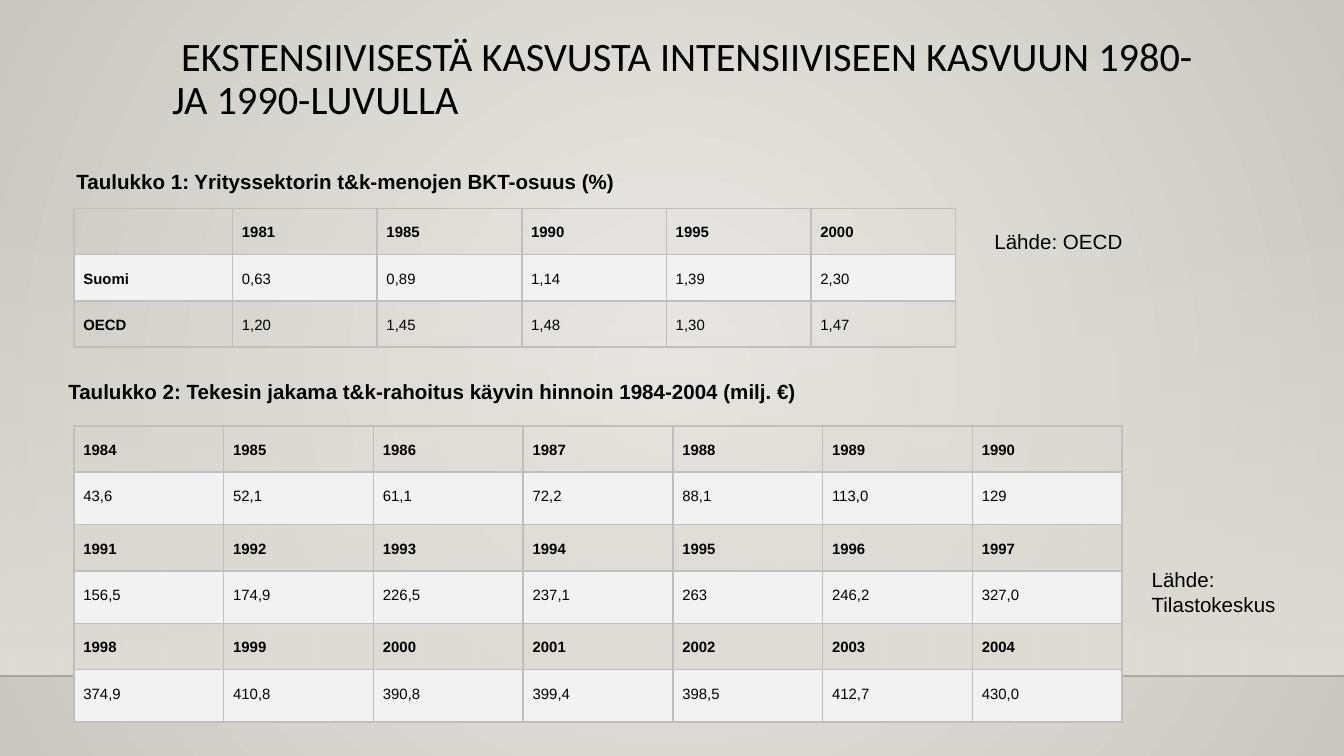
from dataclasses import dataclass

from lxml import etree
from pptx import Presentation
from pptx import util as u
from pptx.dml.color import RGBColor
from pptx.enum import shapes, text
from pptx.oxml import parse_xml
from pptx.oxml.ns import nsdecls, qn


@dataclass(frozen=True)
class Theme:
    """Colours, fonts and type sizes of the slide."""
    ink: str = "000000"
    border: str = "BFBFBF"
    stripe: str = "F2F2F2"
    glow: str = "ECEAE7"
    edge: str = "CAC7C1"
    wall: str = "DFDBD5"
    floor_line: str = "000001"
    title_font: str = "Calibri"
    body_font: str = "Arial"
    title_size: float = 21.6
    label_size: float = 11
    cell_size: float = 8


THEME = Theme()

SPENDING_SHARE = [
    ["", "1981", "1985", "1990", "1995", "2000"],
    ["Suomi", "0,63", "0,89", "1,14", "1,39", "2,30"],
    ["OECD", "1,20", "1,45", "1,48", "1,30", "1,47"],
]

FUNDING = [
    [str(year) for year in range(1984, 1991)],
    ["43,6", "52,1", "61,1", "72,2", "88,1", "113,0", "129"],
    [str(year) for year in range(1991, 1998)],
    ["156,5", "174,9", "226,5", "237,1", "263", "246,2", "327,0"],
    [str(year) for year in range(1998, 2005)],
    ["374,9", "410,8", "390,8", "399,4", "398,5", "412,7", "430,0"],
]


def inches(*values):
    """Convert several lengths to inches."""
    return [u.Inches(value) for value in values]


def gradient(stops, direction):
    """Return a gradient fill from (position, colour, alpha) stops."""
    marks = "".join(
        f'<a:gs pos="{position * 1000}"><a:srgbClr val="{colour}">'
        f'<a:alpha val="{alpha * 1000}"/></a:srgbClr></a:gs>'
        for position, colour, alpha in stops
    )
    return parse_xml(f'<a:gradFill {nsdecls("a")} rotWithShape="1">'
                     f"<a:gsLst>{marks}</a:gsLst>{direction}</a:gradFill>")


def replace_gradient(parent, fill):
    """Swap the gradient inside a parent element for another one."""
    parent.replace(parent.find(qn("a:gradFill")), fill)


def add_run(paragraph, words, size, font, bold=False):
    """Add one formatted run to a paragraph."""
    run = paragraph.add_run()
    run.text = words
    run.font.size = u.Pt(size)
    run.font.name = font
    run.font.bold = bold
    run.font.color.rgb = RGBColor.from_string(THEME.ink)


def set_frame(frame, anchor):
    """Give a text frame even insets, wrapping and an anchor."""
    frame.word_wrap = True
    frame.auto_size = text.MSO_AUTO_SIZE.NONE
    frame.vertical_anchor = anchor
    frame.margin_left = frame.margin_right = u.Inches(0.1)
    frame.margin_top = frame.margin_bottom = u.Inches(0.1)


def add_backdrop(slide):
    """Draw the radial background, the fading wall and the floor line."""
    slide.background.fill.gradient()
    circle = ('<a:path path="circle">'
              '<a:fillToRect l="50000" t="50000" r="50000" b="50000"/></a:path>')
    replace_gradient(slide.background._cSld.bg.bgPr,
                     gradient([(0, THEME.glow, 100), (100, THEME.edge, 100)], circle))

    wall = slide.shapes.add_shape(shapes.MSO_SHAPE.RECTANGLE, *inches(0, 1.66, 10, 3.37))
    wall.shadow.inherit = False
    wall.line.fill.background()
    wall.fill.gradient()
    replace_gradient(wall._element.spPr,
                     gradient([(0, THEME.wall, 0), (100, THEME.wall, 100)],
                              '<a:lin ang="5400000" scaled="0"/>'))

    floor = slide.shapes.add_connector(shapes.MSO_CONNECTOR.STRAIGHT,
                                       *inches(0, 5.03, 10, 5.03))
    floor.line.width = u.Pt(1)
    floor.line.color.rgb = RGBColor.from_string(THEME.floor_line)
    properties = floor._element.spPr
    colour = properties.find(".//" + qn("a:srgbClr"))
    etree.SubElement(colour, qn("a:alpha"), val="20000")
    etree.SubElement(properties, qn("a:effectLst"))


def add_title(slide, words):
    """Place and format the slide title."""
    title = slide.shapes.title
    title.left, title.top, title.width, title.height = inches(1.18, 0.17, 7.88, 0.86)
    set_frame(title.text_frame, text.MSO_ANCHOR.TOP)
    paragraph = title.text_frame.paragraphs[0]
    paragraph.alignment = text.PP_ALIGN.LEFT
    paragraph.line_spacing = 0.9
    add_run(paragraph, words, THEME.title_size, THEME.title_font)


def add_label(slide, box, words, bold=False, anchor=text.MSO_ANCHOR.TOP):
    """Add a table caption or a source note."""
    label = slide.shapes.add_textbox(*inches(*box))
    set_frame(label.text_frame, anchor)
    add_run(label.text_frame.paragraphs[0], words, THEME.label_size, THEME.body_font, bold)


def add_borders(cell):
    """Draw thin lines on all four sides of a cell."""
    properties = cell._tc.get_or_add_tcPr()
    for index, side in enumerate(("lnL", "lnR", "lnT", "lnB")):
        properties.insert(index, parse_xml(
            f'<a:{side} {nsdecls("a")} w="12700"><a:solidFill>'
            f'<a:srgbClr val="{THEME.border}"/></a:solidFill></a:{side}>'))


def fill_cell(cell, words, bold, striped):
    """Write and format one table cell."""
    cell.margin_left = cell.margin_right = u.Inches(0.07)
    cell.margin_top = cell.margin_bottom = u.Inches(0.1)
    if striped:
        cell.fill.solid()
        cell.fill.fore_color.rgb = RGBColor.from_string(THEME.stripe)
    else:
        cell.fill.background()
    add_borders(cell)
    paragraph = cell.text_frame.paragraphs[0]
    paragraph.line_spacing = 1.15
    if words:
        add_run(paragraph, words, THEME.cell_size, THEME.body_font, bold)
    else:
        etree.SubElement(paragraph._p, qn("a:endParaRPr"), sz=str(THEME.cell_size * 100))


def add_grid(slide, box, rows, widths, heights, is_bold):
    """Add a table whose every second row is striped."""
    frame = slide.shapes.add_table(len(rows), len(widths), *inches(*box))
    table = frame.table
    table.first_row = table.horz_banding = False
    for column, width in zip(table.columns, widths):
        column.width = u.Inches(width)
    for row, height in zip(table.rows, heights):
        row.height = u.Inches(height)
    for i, values in enumerate(rows):
        for j, words in enumerate(values):
            fill_cell(table.cell(i, j), words, is_bold(i, j), i % 2 == 1)


def main():
    """Build the slide and save it."""
    presentation = Presentation()
    presentation.slide_width = u.Inches(10)
    presentation.slide_height = u.Inches(10 * 9 / 16)
    slide = presentation.slides.add_slide(presentation.slide_layouts[5])
    add_backdrop(slide)
    add_title(slide, " EKSTENSIIVISESTÄ KASVUSTA INTENSIIVISEEN KASVUUN 1980- JA 1990-LUVULLA")

    add_grid(slide, (0.55, 3.17, 7.8, 2.21), FUNDING,
             [7.8 / 7] * 7, [0.34, 0.39] * 3, lambda i, j: i % 2 == 0)
    add_label(slide, (0.41, 2.65, 6.7, 0.52),
              "Taulukko 2: Tekesin jakama t&k-rahoitus käyvin hinnoin 1984-2004 (milj. €)",
              bold=True, anchor=text.MSO_ANCHOR.MIDDLE)
    add_label(slide, (8.47, 4.12, 1.59, 0.62), "Lähde: Tilastokeskus")

    add_grid(slide, (0.55, 1.55, 6.56, 1.02), SPENDING_SHARE,
             [1.18] + [(6.56 - 1.18) / 5] * 5, [0.34] * 3, lambda i, j: i == 0 or j == 0)
    add_label(slide, (0.47, 1.16, 5.61, 0.38),
              "Taulukko 1: Yrityssektorin t&k-menojen BKT-osuus (%)", bold=True)
    add_label(slide, (7.3, 1.61, 2.35, 0.19), "Lähde: OECD")
    presentation.save("out.pptx")


if __name__ == "__main__":
    main()
